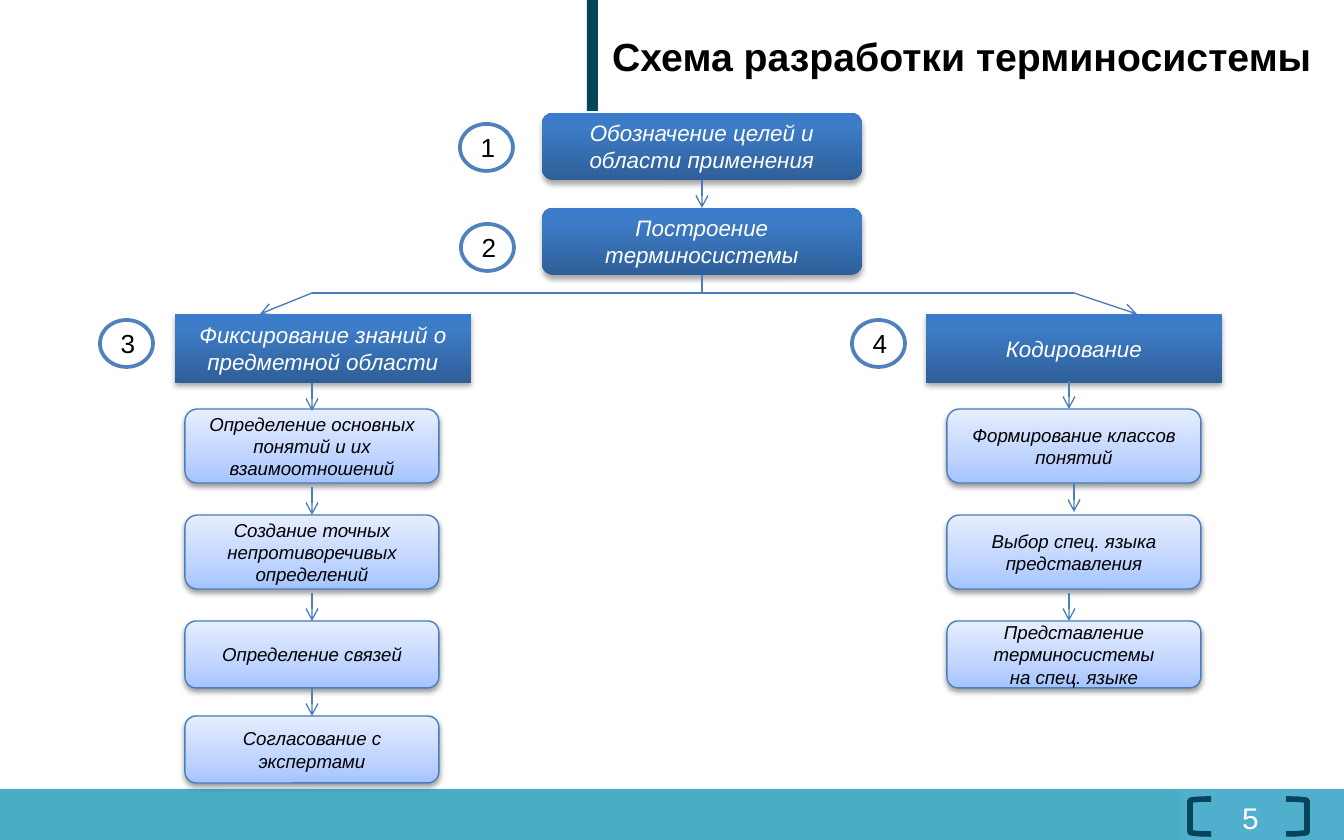
from typing import NamedTuple, Optional

from lxml.etree import SubElement
from pptx import Presentation
from pptx.dml.color import RGBColor
from pptx.enum.shapes import MSO_CONNECTOR, MSO_SHAPE as Shp
from pptx.enum.text import MSO_ANCHOR as Anchor, PP_ALIGN as Align
from pptx.oxml.ns import qn
from pptx.util import Emu, Pt

EMU_PER_PX = 914400 / 134.4

BLACK = RGBColor(0x00, 0x00, 0x00)
WHITE = RGBColor(0xFF, 0xFF, 0xFF)
DARK_TEAL = RGBColor(0x04, 0x45, 0x59)
FOOTER_BACK = RGBColor(0x4F, 0xAF, 0xCD)
FOOTER_FRONT = RGBColor(0x4B, 0xAC, 0xC6)
EDGE_BLUE = RGBColor(0x4B, 0x7E, 0xBC)
RING_BLUE = RGBColor(0x4F, 0x81, 0xBD)
DEEP_STOPS = ((0, RGBColor(0x2F, 0x5F, 0x99)), (80, RGBColor(0x3D, 0x7C, 0xC7)),
              (100, RGBColor(0x3A, 0x7C, 0xCB)))
PALE_STOPS = ((0, RGBColor(0xA4, 0xC4, 0xFF)), (35, RGBColor(0xBF, 0xD4, 0xFF)),
              (100, RGBColor(0xE6, 0xEE, 0xFF)))


class Rect(NamedTuple):
    x: int
    y: int
    w: int
    h: int


class BoxStyle(NamedTuple):
    stops: tuple
    edge: Optional[RGBColor]
    shadow_alpha: int
    shadow_dist: float
    font: dict


class Box(NamedTuple):
    rect: Rect
    kind: Shp
    style: BoxStyle
    text: str


class Line(NamedTuple):
    x1: int
    y1: int
    x2: int
    y2: int
    arrow: bool = True


STAGE = BoxStyle(DEEP_STOPS, None, 35, 1.8, {"size": Pt(12), "italic": True, "color": WHITE})
STEP = BoxStyle(PALE_STOPS, EDGE_BLUE, 38, 1.6, {"size": Pt(10), "italic": True, "color": BLACK})

STAGES = [
    Box(Rect(542, 113, 320, 67), Shp.ROUNDED_RECTANGLE, STAGE,
        "Обозначение целей и области применения"),
    Box(Rect(542, 208, 320, 67), Shp.ROUNDED_RECTANGLE, STAGE, "Построение терминосистемы"),
    Box(Rect(175, 314, 296, 69), Shp.RECTANGLE, STAGE,
        "Фиксирование знаний о предметной области"),
    Box(Rect(926, 314, 296, 69), Shp.RECTANGLE, STAGE, "Кодирование"),
]
STEP_ROWS = ((409, 74), (515, 74), (621, 67), (716, 67))
STEP_COLUMNS = {
    185: ("Определение основных понятий и их взаимоотношений",
          "Создание точных непротиворечивых определений",
          "Определение связей",
          "Согласование с экспертами"),
    947: ("Формирование классов понятий",
          "Выбор спец. языка представления",
          "Представление терминосистемы\nна спец. языке"),
}
STEPS = [Box(Rect(x, y, 254, h), Shp.ROUNDED_RECTANGLE, STEP, text)
         for x, texts in STEP_COLUMNS.items()
         for (y, h), text in zip(STEP_ROWS, texts)]

DOWN_ARROW_LENGTH = 28
DOWN_ARROWS = ((702, 180), (312, 383), (312, 487), (312, 593), (312, 688),
               (1069, 381), (1074, 484), (1069, 593))
LINES = [
    Line(312, 293, 1074, 293, False),
    Line(702, 275, 702, 293, False),
    Line(312, 293, 260, 314),
    Line(1074, 293, 1137, 314),
    *(Line(x, y, x, y + DOWN_ARROW_LENGTH) for x, y in DOWN_ARROWS),
]
NUMBER_SPOTS = ((460, 124), (461, 224), (100, 320), (852, 320))


def px(n: int) -> Emu:
    return Emu(round(n * EMU_PER_PX))


def write(s, text: str, font: dict, align: Align = Align.CENTER, **frame) -> None:
    """Set the text of a shape, one paragraph per line."""
    tf = s.text_frame
    for name, value in {"word_wrap": True, "vertical_anchor": Anchor.MIDDLE, **frame}.items():
        setattr(tf, name, value)
    tf.text = text
    for p in tf.paragraphs:
        p.alignment = align
        for r in p.runs:
            for name, value in {"name": "Arial", **font}.items():
                if name == "color":
                    r.font.color.rgb = value
                else:
                    setattr(r.font, name, value)


def add_plain(slide, kind: Shp, rect: Rect, fill: Optional[RGBColor] = None,
              line: Optional[RGBColor] = None, width: float = 0.75):
    s = slide.shapes.add_shape(kind, *map(px, rect))
    s.shadow.inherit = False
    if fill is None:
        s.fill.background()
    else:
        s.fill.solid()
        s.fill.fore_color.rgb = fill
    if line is None:
        s.line.fill.background()
    else:
        s.line.color.rgb = line
        s.line.width = Pt(width)
    return s


def add_color(parent, color: RGBColor):
    return SubElement(parent, qn("a:srgbClr"), val=str(color))


def add_box(slide, box: Box) -> None:
    style = box.style
    s = add_plain(slide, box.kind, box.rect, line=style.edge)
    s.fill.gradient()
    s.fill.gradient_angle = 90
    sp_pr = s._element.spPr
    stop_list = sp_pr.find(qn("a:gradFill")).find(qn("a:gsLst"))
    for stop in list(stop_list):
        stop_list.remove(stop)
    for pos, color in style.stops:
        add_color(SubElement(stop_list, qn("a:gs"), pos=str(pos * 1000)), color)
    shadow = SubElement(sp_pr.find(qn("a:effectLst")), qn("a:outerShdw"),
                        blurRad=str(Pt(3.1)), dist=str(Pt(style.shadow_dist)),
                        dir="5400000", rotWithShape="0")
    SubElement(add_color(shadow, BLACK), qn("a:alpha"), val=str(style.shadow_alpha * 1000))
    write(s, box.text, style.font)


def add_line(slide, line: Line) -> None:
    s = slide.shapes.add_connector(MSO_CONNECTOR.STRAIGHT, *map(px, line[:4]))
    s.line.color.rgb = EDGE_BLUE
    s.line.width = Pt(0.75)
    if line.arrow:
        SubElement(s.line._get_or_add_ln(), qn("a:tailEnd"), type="arrow")
    SubElement(s._element.spPr, qn("a:effectLst"))


def add_number(slide, number: int, x: int, y: int) -> None:
    s = add_plain(slide, Shp.FLOWCHART_CONNECTOR, Rect(x, y, 53, 47), WHITE, RING_BLUE, 2)
    write(s, str(number), {"size": Pt(14), "color": BLACK},
          margin_left=px(3), margin_right=0, margin_top=0, margin_bottom=0)


def add_frame(slide) -> None:
    """Draw the title, its bar and the footer with the page number."""
    add_plain(slide, Shp.RECTANGLE, Rect(0, 789, 1344, 51), FOOTER_BACK)
    for kind, x in ((Shp.LEFT_BRACKET, 1190), (Shp.RIGHT_BRACKET, 1286)):
        add_plain(slide, kind, Rect(x, 799, 21, 35), line=DARK_TEAL, width=3)
    add_plain(slide, Shp.RECTANGLE, Rect(587, 0, 11, 111), DARK_TEAL)
    title = slide.shapes.add_textbox(*map(px, Rect(599, 0, 745, 112)))
    write(title, "Схема разработки терминосистемы",
          {"size": Pt(21), "bold": True, "color": BLACK}, Align.LEFT)
    page = slide.shapes.add_textbox(*map(px, Rect(1192, 800, 117, 35)))
    write(page, "5", {"size": Pt(16), "color": WHITE})
    add_plain(slide, Shp.RECTANGLE, Rect(0, 790, 1180, 50), FOOTER_FRONT)


def main() -> None:
    prs = Presentation()
    prs.slide_width, prs.slide_height = px(1344), px(840)
    slide = prs.slides.add_slide(prs.slide_layouts[6])
    add_frame(slide)
    for box in STAGES + STEPS:
        add_box(slide, box)
    for line in LINES:
        add_line(slide, line)
    for number, (x, y) in enumerate(NUMBER_SPOTS, start=1):
        add_number(slide, number, x, y)
    prs.save("out.pptx")


if __name__ == "__main__":
    main()
